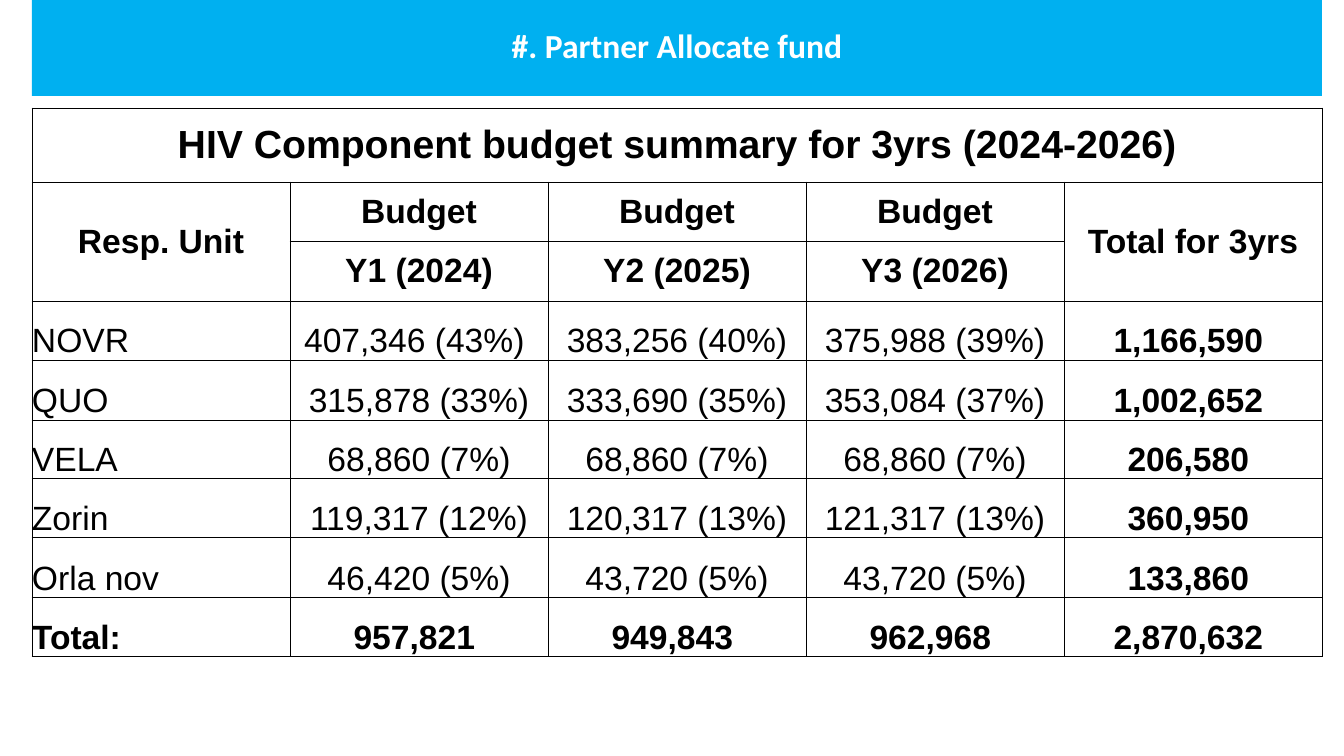
import dataclasses

import lxml.etree
import pptx
import pptx.dml.color
import pptx.enum.text
import pptx.oxml.ns
import pptx.util

RGB = pptx.dml.color.RGBColor
ALIGN = pptx.enum.text.PP_ALIGN
ANCHOR = pptx.enum.text.MSO_ANCHOR
EMU_PER_PX = 12192000 / 1344


@dataclasses.dataclass(frozen=True)
class Theme:
    banner: str = "00B0F0"
    banner_text: str = "FFFFFF"
    ink: str = "000000"
    title_font: str = "Calibri"
    table_font: str = "Arial"
    caption_size: int = 28
    text_size: int = 24
    border_width: float = 0.5


@dataclasses.dataclass(frozen=True)
class Box:
    left: int
    top: int
    width: int
    height: int


@dataclasses.dataclass(frozen=True)
class Merge:
    first: tuple[int, int]
    last: tuple[int, int]


THEME = Theme()
BANNER = Box(32, 0, 1290, 96)
TABLE = Box(32, 108, 1290, 549)
CAPTION_HEIGHT = 74
HEADER_ROWS = 3

ROWS = [
    ["HIV Component budget summary for 3yrs (2024-2026)", "", "", "", ""],
    ["Resp. Unit", "Budget", "Budget", "Budget", "Total for 3yrs"],
    ["", "Y1 (2024)", "Y2 (2025)", "Y3 (2026)", ""],
    ["NOVR", "407,346 (43%) ", "383,256 (40%)", "375,988 (39%)", "1,166,590 "],
    ["QUO", "315,878 (33%)", "333,690 (35%)", "353,084 (37%)", "1,002,652 "],
    ["VELA", "68,860 (7%)", "68,860 (7%)", "68,860 (7%)", "206,580 "],
    ["Zorin", "119,317 (12%)", "120,317 (13%)", "121,317 (13%)", "360,950 "],
    ["Orla nov", "46,420 (5%)", "43,720 (5%)", "43,720 (5%)", "133,860 "],
    ["Total:", "957,821 ", "949,843 ", "962,968 ", "2,870,632 "],
]
MERGES = [
    Merge((0, 0), (0, 4)),
    Merge((1, 0), (2, 0)),
    Merge((1, 4), (2, 4)),
]


def px(length: int) -> int:
    return pptx.util.Emu(round(length * EMU_PER_PX))


def set_all(target: object, values: dict[str, object]) -> None:
    for name, value in values.items():
        setattr(target, name, value)


def place(box: Box) -> dict[str, int]:
    return {name: px(value) for name, value in dataclasses.asdict(box).items()}


def write(paragraph, text: str, font: str, size: int, color: str, bold: bool) -> None:
    run = paragraph.add_run()
    run.text = text
    set_all(run.font, {"name": font, "size": pptx.util.Pt(size), "bold": bold})
    run.font.color.rgb = RGB.from_string(color)


def draw_borders(cell) -> None:
    properties = cell._tc.get_or_add_tcPr()
    tag = pptx.oxml.ns.qn
    for side in ("a:lnL", "a:lnR", "a:lnT", "a:lnB"):
        line = lxml.etree.SubElement(properties, tag(side))
        line.set("w", str(pptx.util.Pt(THEME.border_width)))
        fill = lxml.etree.SubElement(line, tag("a:solidFill"))
        lxml.etree.SubElement(fill, tag("a:srgbClr")).set("val", THEME.ink)


def draw_title(slide, text: str) -> None:
    title = slide.shapes.title
    set_all(title, place(BANNER))
    title.fill.solid()
    title.fill.fore_color.rgb = RGB.from_string(THEME.banner)
    set_all(title.text_frame, {"vertical_anchor": ANCHOR.MIDDLE, "word_wrap": True})
    paragraph = title.text_frame.paragraphs[0]
    set_all(paragraph, {"alignment": ALIGN.CENTER, "line_spacing": 0.9})
    write(paragraph, text, THEME.title_font, THEME.text_size, THEME.banner_text, True)


def format_cell(cell, row: int, column: int, text: str) -> None:
    header = row < HEADER_ROWS
    set_all(cell, {
        "margin_left": 0,
        "margin_right": 0,
        "margin_top": 0,
        "margin_bottom": 0,
        "vertical_anchor": ANCHOR.MIDDLE if header else ANCHOR.BOTTOM,
    })
    draw_borders(cell)
    cell.fill.background()
    if text:
        paragraph = cell.text_frame.paragraphs[0]
        paragraph.alignment = ALIGN.CENTER if header or column else ALIGN.LEFT
        bold = header or row == len(ROWS) - 1 or column == len(ROWS[0]) - 1
        size = THEME.text_size if row else THEME.caption_size
        write(paragraph, text, THEME.table_font, size, THEME.ink, bold)


def draw_table(slide) -> None:
    frame = slide.shapes.add_table(len(ROWS), len(ROWS[0]), **place(TABLE))
    table = frame.table
    set_all(table, {"first_row": False, "horz_banding": False})

    # Equal columns, and equal rows below the caption
    for column in table.columns:
        column.width = px(TABLE.width // len(ROWS[0]))
    steps = len(ROWS) - 1
    edges = [round(step * (TABLE.height - CAPTION_HEIGHT) / steps) for step in range(steps + 1)]
    heights = [CAPTION_HEIGHT] + [lower - upper for upper, lower in zip(edges, edges[1:])]
    for row, height in zip(table.rows, heights):
        row.height = px(height)

    # Cell contents
    for merge in MERGES:
        table.cell(*merge.first).merge(table.cell(*merge.last))
    for row, texts in enumerate(ROWS):
        for column, text in enumerate(texts):
            format_cell(table.cell(row, column), row, column, text)


def main() -> None:
    presentation = pptx.Presentation()
    set_all(presentation, {"slide_width": px(1344), "slide_height": px(756)})
    slide = presentation.slides.add_slide(presentation.slide_layouts.get_by_name("Title Only"))
    draw_table(slide)
    draw_title(slide, "#. Partner Allocate fund")
    presentation.save("out.pptx")


if __name__ == "__main__":
    main()
